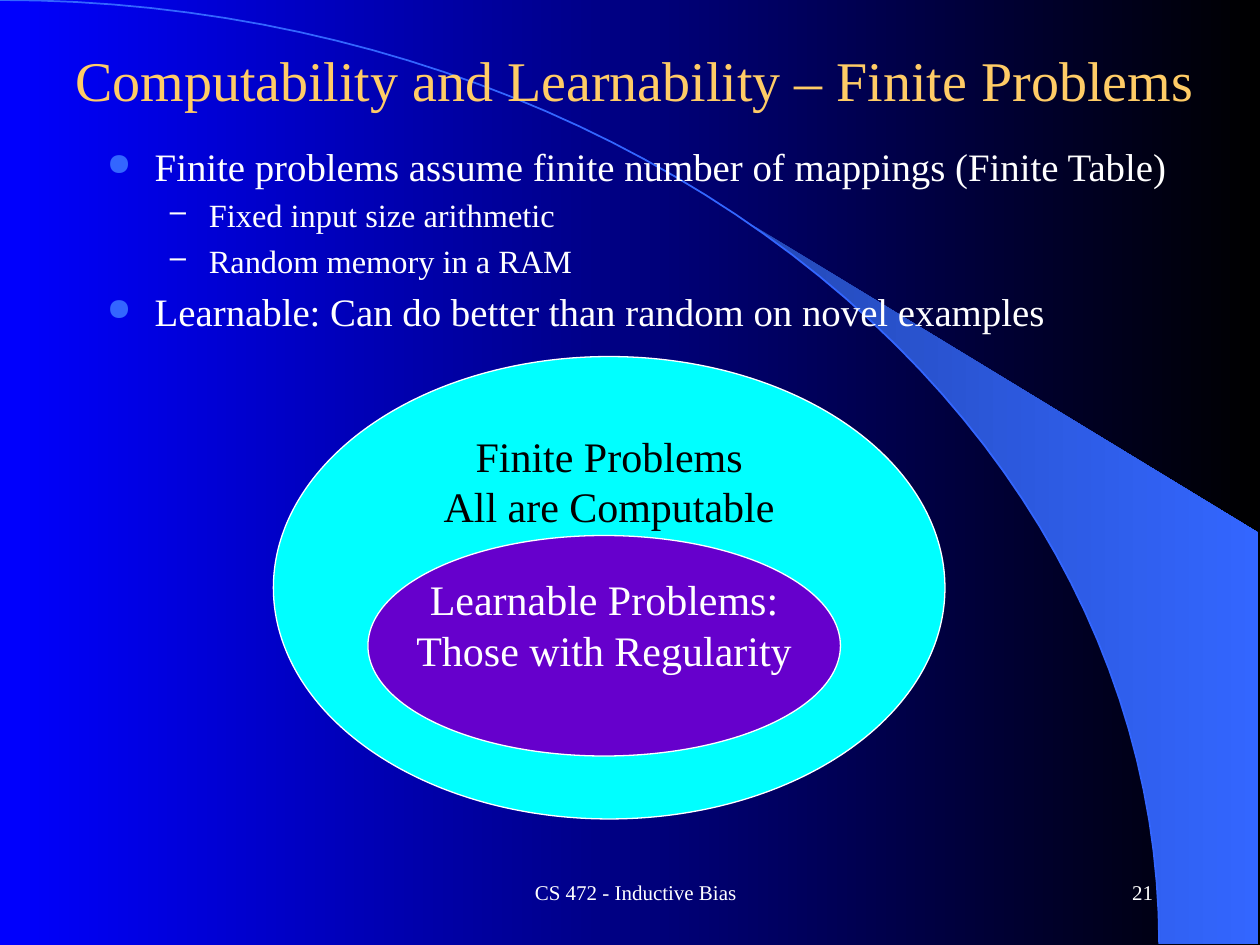
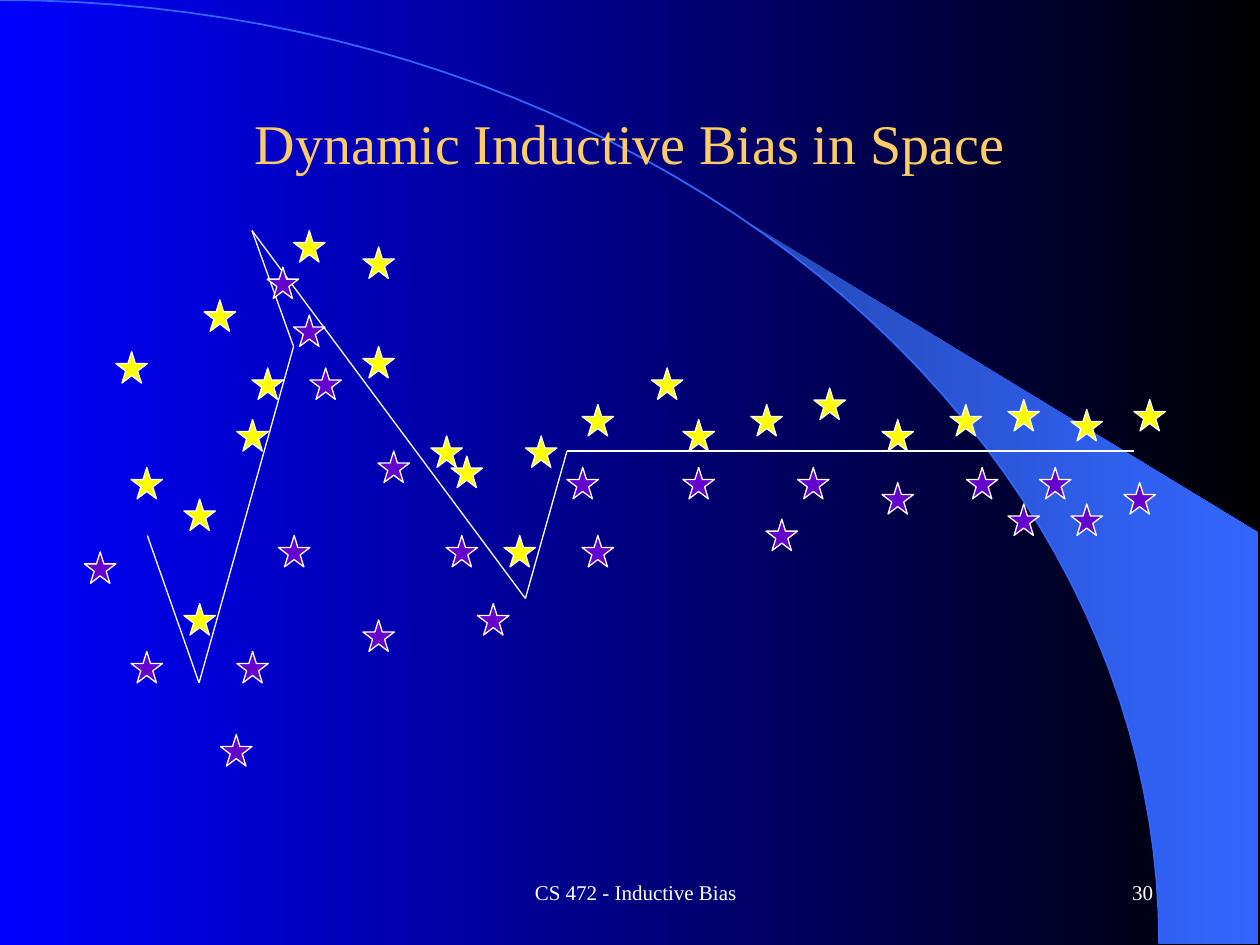
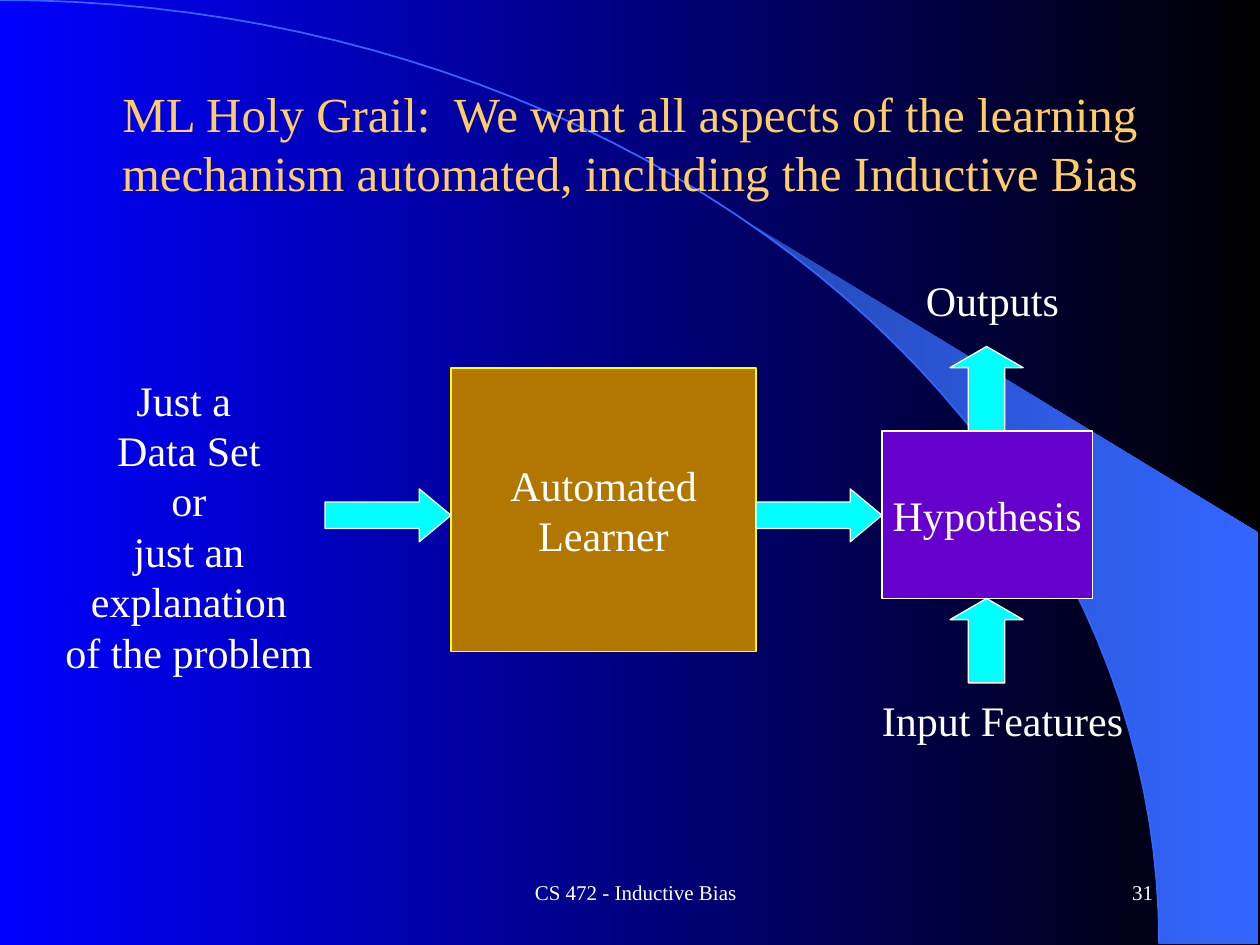
from itertools import pairwise
from math import asin, cos, pi, sin

from lxml import etree
from pptx import Presentation
from pptx.dml.color import RGBColor
from pptx.enum.shapes import MSO_CONNECTOR, MSO_SHAPE
from pptx.enum.text import MSO_ANCHOR, MSO_AUTO_SIZE, PP_ALIGN
from pptx.oxml.ns import qn
from pptx.util import Inches, Pt

LEFT, CENTER, RIGHT = PP_ALIGN.LEFT, PP_ALIGN.CENTER, PP_ALIGN.RIGHT
TOP, MIDDLE = MSO_ANCHOR.TOP, MSO_ANCHOR.MIDDLE
FIXED, GROW = MSO_AUTO_SIZE.NONE, MSO_AUTO_SIZE.SHAPE_TO_FIT_TEXT
STRAIGHT = MSO_CONNECTOR.STRAIGHT
ELLIPSE, RECTANGLE, STAR = MSO_SHAPE.OVAL, MSO_SHAPE.RECTANGLE, MSO_SHAPE.STAR_5_POINT
RIGHT_ARROW, UP_ARROW = MSO_SHAPE.RIGHT_ARROW, MSO_SHAPE.UP_ARROW

FONT = "Times New Roman"
FOOTER = "CS 472 - Inductive Bias"
TITLE_ONLY = 5
COLORS = {
    "blue": "0000FF",
    "wedge": "2449B6",
    "accent": "3366FF",
    "title": "FFCC66",
    "white": "FFFFFF",
    "black": "000000",
    "cyan": "00FFFF",
    "purple": "6600CC",
    "yellow": "FFFF00",
    "brown": "B27700",
}
ARC_WIDTH, ARC_HEIGHT = 9.2, 7.49
WEDGE_LEFT, WEDGE_RIGHT, WEDGE_TOP = 5.89, 9.99, 4.23
ARC_STEPS = 48
STAR_SIZE = 0.25
BULLETS = [
    {"mark": "●", "color": "accent", "percent": 80, "margin": 0.38, "hang": 0.38, "size": 22.2},
    {"mark": "–", "color": "white", "percent": 90, "margin": 0.81, "hang": 0.31, "size": 18.5},
]


def color(name):
    return RGBColor.from_string(COLORS[name])


def arc_points(start):
    angles = [start + (pi / 2 - start) * step / ARC_STEPS for step in range(ARC_STEPS + 1)]
    return [(ARC_WIDTH * sin(angle), ARC_HEIGHT * (1 - cos(angle))) for angle in angles]


class Deck:
    def __init__(self):
        self.presentation = Presentation()
        self.presentation.slide_width = Inches(10)
        self.presentation.slide_height = Inches(7.5)
        self.gradient(self.presentation.slide_master.background.fill, "blue", "black")
        self.slide = None

    def start_slide(self, title, number, box=(0.75, 0.67, 8.5, 0.92), size=32):
        layout = self.presentation.slide_layouts[TITLE_ONLY]
        self.slide = self.presentation.slides.add_slide(layout)
        self.decorate()
        self.title(title, box, size)
        self.text([FOOTER], (3.17, 6.83, 3.75, 0.5), 12, CENTER, MIDDLE)
        self.text([str(number)], (7.17, 6.83, 2.08, 0.5), 12, RIGHT, MIDDLE)

    def gradient(self, fill, *names):
        fill.gradient()
        fill.gradient_angle = 0
        for stop, name in zip(fill.gradient_stops, names):
            stop.color.rgb = color(name)

    def decorate(self):
        curve = arc_points(asin(WEDGE_LEFT / ARC_WIDTH))
        corners = [(WEDGE_RIGHT, ARC_HEIGHT), (WEDGE_RIGHT, WEDGE_TOP)]
        wedge = self.outline(curve + corners, True)
        self.gradient(wedge.fill, "wedge", "accent")
        wedge.line.fill.background()
        arc = self.outline(arc_points(0), False)
        arc.fill.background()
        self.line(arc, "accent", 1)

    def outline(self, points, close):
        scaled = [(Inches(x), Inches(y)) for x, y in points]
        builder = self.slide.shapes.build_freeform(*scaled[0])
        builder.add_line_segments(scaled[1:], close=close)
        shape = builder.convert_to_shape()
        shape.shadow.inherit = False
        return shape

    def line(self, shape, name, width=0.75):
        shape.line.color.rgb = color(name)
        shape.line.width = Pt(width)

    def title(self, text, box, size):
        shape = self.slide.shapes.title
        shape.left, shape.top, shape.width, shape.height = map(Inches, box)
        self.set_text(shape, [text], size, "title", CENTER, MIDDLE, True)
        element = shape._element
        element.getparent().append(element)

    def set_text(self, shape, lines, size, name, align, anchor, wrap):
        frame = shape.text_frame
        frame.text = "\n".join(lines)
        frame.word_wrap = wrap
        frame.auto_size = FIXED
        frame.vertical_anchor = anchor
        for paragraph in frame.paragraphs:
            paragraph.alignment = align
            self.font(paragraph, size, name)

    def font(self, paragraph, size, name):
        paragraph.font.name = FONT
        paragraph.font.size = Pt(size)
        paragraph.font.color.rgb = color(name)

    def text(self, lines, box, size=24, align=LEFT, anchor=TOP, wrap=True):
        shape = self.slide.shapes.add_textbox(*map(Inches, box))
        self.set_text(shape, lines, size, "white", align, anchor, wrap)
        return shape

    def label(self, lines, box, align=LEFT):
        shape = self.text(lines, box, align=align, wrap=False)
        shape.text_frame.auto_size = GROW

    def bullets(self, items, box):
        shape = self.slide.shapes.add_textbox(*map(Inches, box))
        frame = shape.text_frame
        frame.word_wrap = True
        frame.text = "\n".join(text for _, text in items)
        for paragraph, (level, _) in zip(frame.paragraphs, items):
            style = BULLETS[level]
            paragraph.level = level
            paragraph.space_before = Pt(style["size"] * 0.2)
            self.mark(paragraph, style)
            self.font(paragraph, style["size"], "white")

    def mark(self, paragraph, style):
        properties = paragraph._p.get_or_add_pPr()
        properties.set("marL", str(Inches(style["margin"])))
        properties.set("indent", str(-Inches(style["hang"])))
        tint = etree.SubElement(properties, qn("a:buClr"))
        etree.SubElement(tint, qn("a:srgbClr"), val=COLORS[style["color"]])
        etree.SubElement(properties, qn("a:buSzPct"), val=str(style["percent"] * 1000))
        etree.SubElement(properties, qn("a:buChar"), char=style["mark"])

    def shape(self, kind, box, fill, line="white"):
        shape = self.slide.shapes.add_shape(kind, *map(Inches, box))
        shape.shadow.inherit = False
        shape.fill.solid()
        shape.fill.fore_color.rgb = color(fill)
        self.line(shape, line)
        return shape

    def block(self, kind, box, fill, lines, line="white", font="white", anchor=MIDDLE):
        shape = self.shape(kind, box, fill, line)
        self.set_text(shape, lines, 24, font, CENTER, anchor, False)

    def arrow(self, kind, box, head):
        shape = self.shape(kind, box, "cyan")
        shape.adjustments[0] = 0.5
        shape.adjustments[1] = head

    def polyline(self, points):
        for start, end in pairwise(points):
            connector = self.slide.shapes.add_connector(STRAIGHT, *map(Inches, start + end))
            self.line(connector, "white")
            etree.SubElement(connector._element.spPr, qn("a:effectLst"))

    def stars(self, points, fill):
        for left, top in points:
            self.shape(STAR, (left, top, STAR_SIZE, STAR_SIZE), fill)


def finite_problems(deck):
    deck.start_slide("Computability and Learnability – Finite Problems", 21, (0.33, 0.17, 9.42, 0.92))
    deck.bullets([
        (0, "Finite problems assume finite number of mappings (Finite Table)"),
        (1, "Fixed input size arithmetic"),
        (1, "Random memory in a RAM"),
        (0, "Learnable: Can do better than random on novel examples"),
    ], (0.75, 1.08, 8.67, 1.58))
    deck.block(ELLIPSE, (2.17, 2.83, 5.33, 3.67), "cyan",
               ["Finite Problems", "All are Computable"], font="black", anchor=TOP)
    deck.block(ELLIPSE, (2.92, 4.25, 3.75, 1.75), "purple",
               ["Learnable Problems:", "Those with Regularity"], anchor=TOP)


def dynamic_bias(deck):
    deck.start_slide("Dynamic Inductive Bias in Space", 30)
    deck.polyline([(1.17, 4.25), (1.58, 5.42), (2.33, 2.75), (2, 1.83),
                   (4.17, 4.75), (4.5, 3.58), (9, 3.58)])
    below_boundary = [
        (2.21, 4.25), (2.46, 2.92), (2.33, 2.5), (3, 3.58), (1.88, 5.17), (2.88, 4.92),
        (3.79, 4.79), (4.5, 3.71), (5.42, 3.71), (1.75, 5.83), (6.08, 4.12), (1.04, 5.17),
        (0.67, 4.38), (3.54, 4.25), (4.62, 4.25), (6.33, 3.71), (2.12, 2.12), (7, 3.83),
        (7.67, 3.71), (8.25, 3.71), (8.5, 4), (8, 4), (8.92, 3.83),
    ]
    above_boundary = [
        (1.46, 4.79), (1.46, 3.96), (1.04, 3.71), (0.92, 2.79), (1.88, 3.33), (2, 2.92),
        (1.62, 2.38), (2.33, 1.83), (2.88, 2.75), (2.88, 1.96), (3.42, 3.46), (5.96, 3.21),
        (5.42, 3.33), (5.17, 2.92), (4.62, 3.21), (4.17, 3.46), (4, 4.25), (3.58, 3.62),
        (7, 3.33), (6.46, 3.08), (7.54, 3.21), (8, 3.17), (8.5, 3.25), (9, 3.17),
    ]
    deck.stars(below_boundary, "purple")
    deck.stars(above_boundary, "yellow")


def holy_grail(deck):
    deck.start_slide("ML Holy Grail:  We want all aspects of the learning mechanism automated, "
                     "including the Inductive Bias", 31, size=28)
    deck.block(RECTANGLE, (3.58, 2.92, 2.42, 2.25), "brown", ["Automated", "Learner"], line="yellow")
    for left in (2.58, 6):
        deck.arrow(RIGHT_ARROW, (left, 3.88, 1, 0.42), 0.6)
    deck.label(["Just a ", "Data Set", "or", "just an", "explanation", "of the problem"],
               (0.42, 2.92, 2.16, 2.5), CENTER)
    deck.block(RECTANGLE, (7, 3.42, 1.67, 1.33), "purple", ["Hypothesis"])
    for top in (4.75, 2.75):
        deck.arrow(UP_ARROW, (7.54, top, 0.58, 0.67), 0.29)
    deck.label(["Input Features"], (6.9, 5.46, 2.12, 0.5))
    deck.label(["Outputs"], (7.25, 2.13, 1.26, 0.5))


def main():
    deck = Deck()
    finite_problems(deck)
    dynamic_bias(deck)
    holy_grail(deck)
    deck.presentation.save("out.pptx")


if __name__ == "__main__":
    main()
